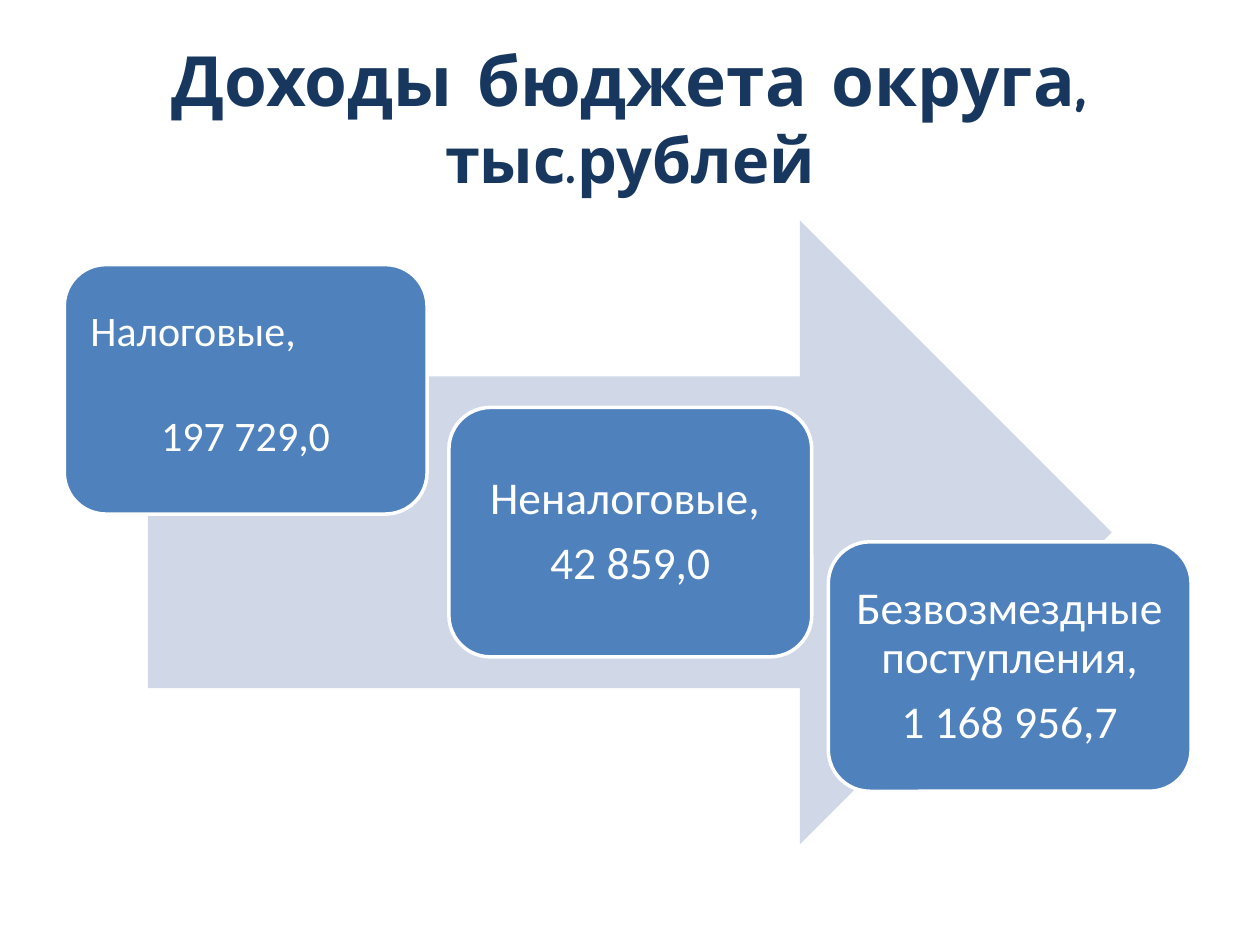
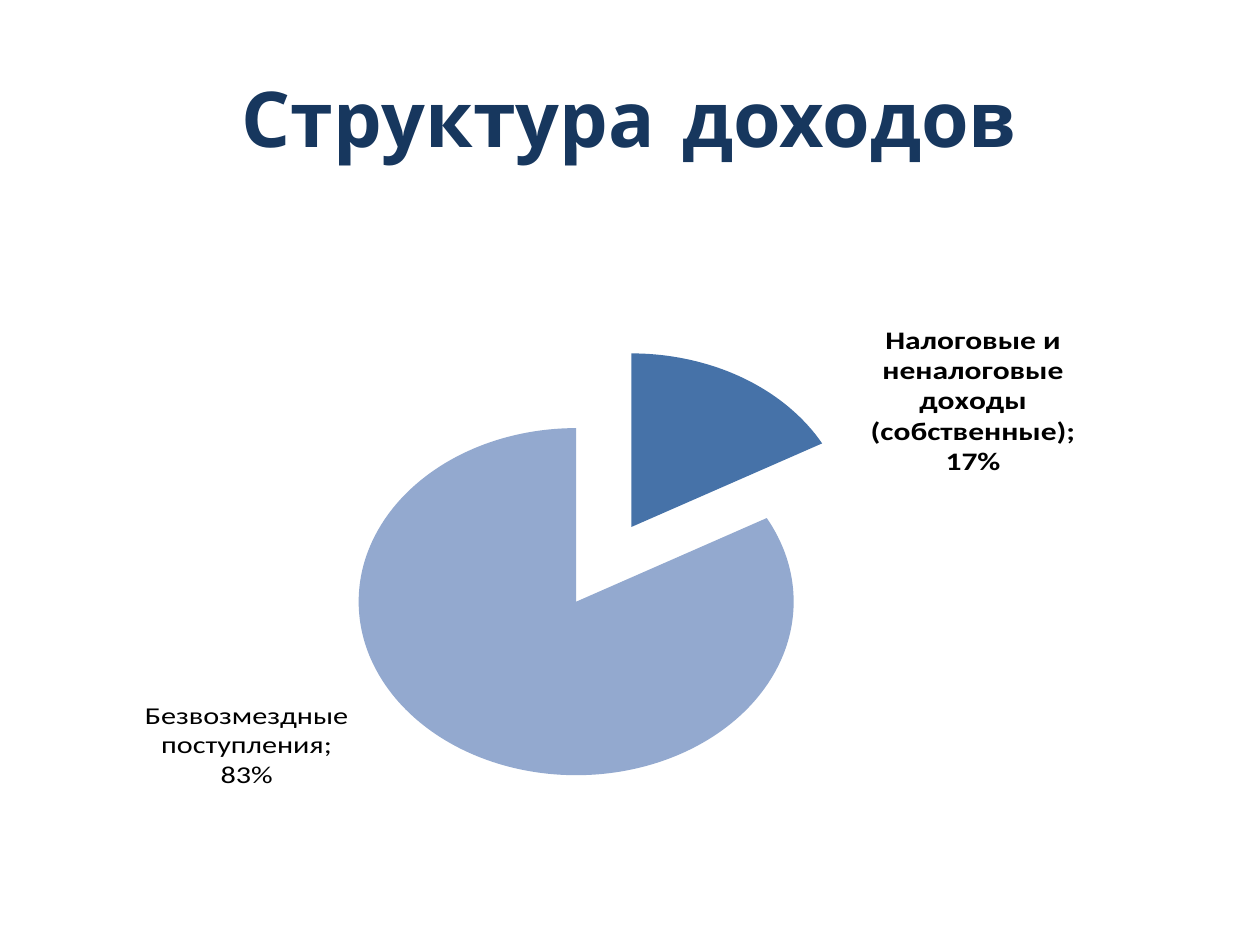
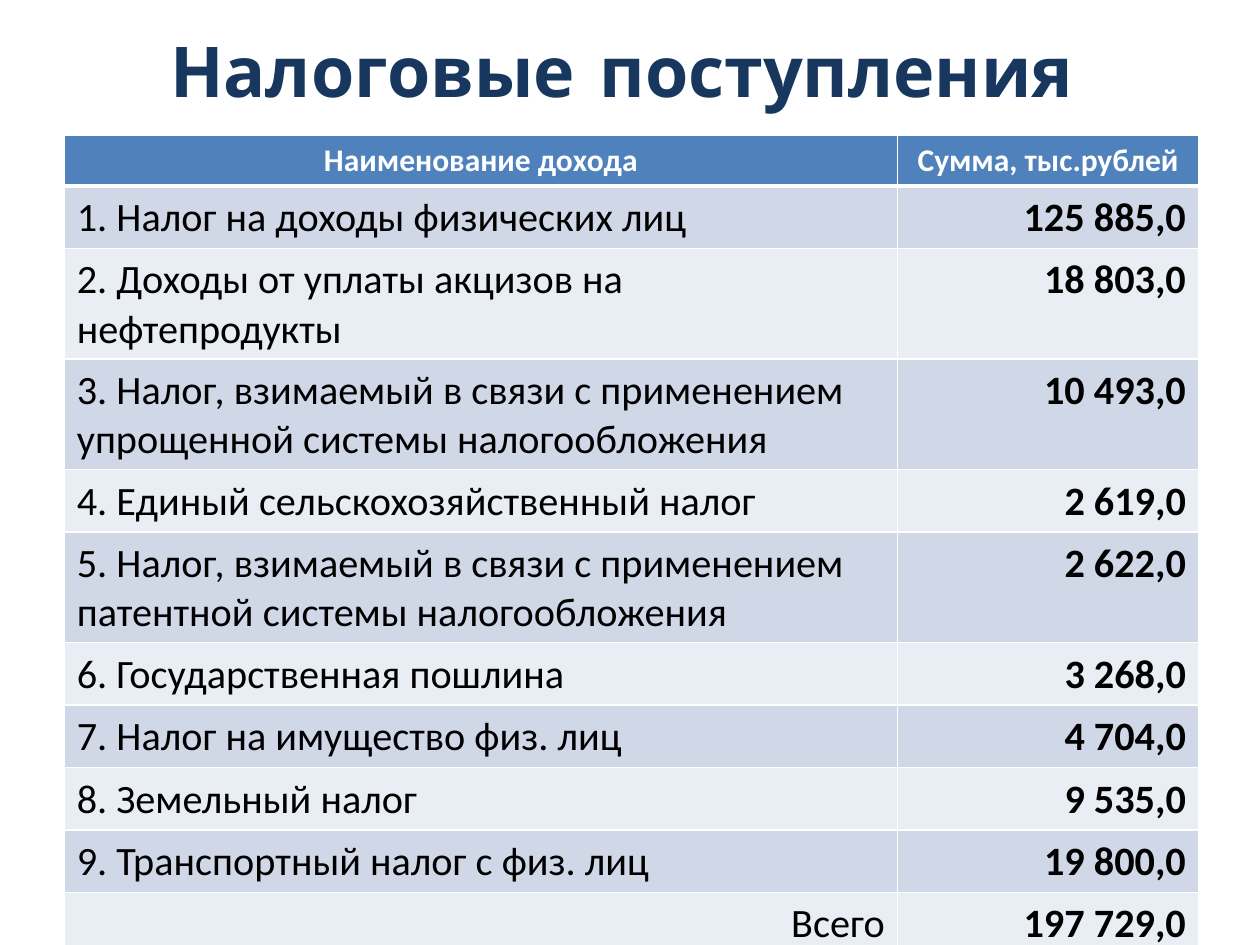
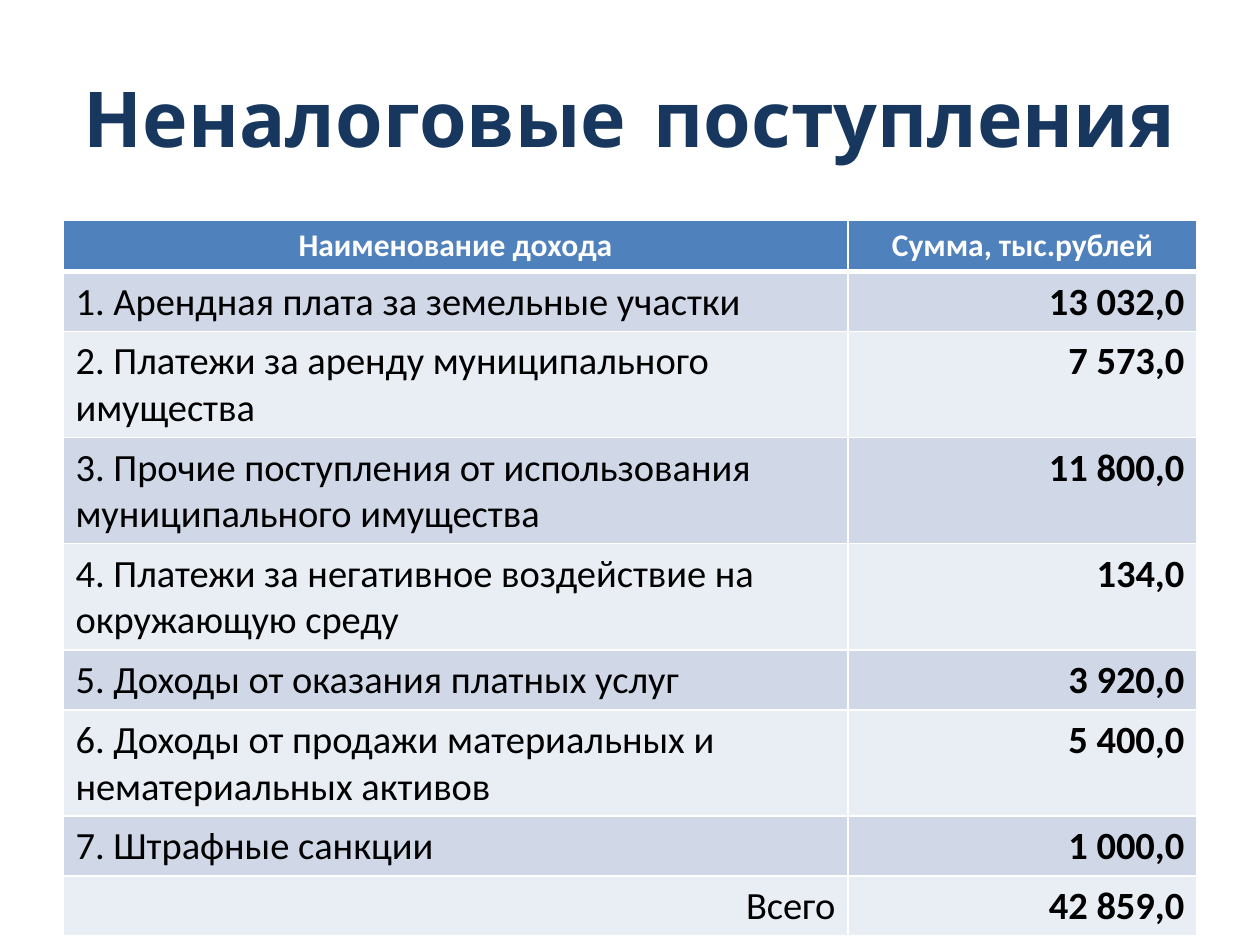
import pptx
import pptx.chart.data
import pptx.dml.color
import pptx.enum.chart
import pptx.enum.shapes
import pptx.enum.text
import pptx.oxml
import pptx.oxml.ns
import pptx.util

Pt = pptx.util.Pt
RGB = pptx.dml.color.RGBColor
ALIGN = pptx.enum.text.PP_ALIGN
MIDDLE = pptx.enum.text.MSO_ANCHOR.MIDDLE
SHAPE = pptx.enum.shapes.MSO_SHAPE
qn = pptx.oxml.ns.qn

NAVY = RGB(0x17, 0x37, 0x5E)
BLUE = RGB(0x4F, 0x81, 0xBD)
BAND_DARK = RGB(0xD0, 0xD8, 0xE8)
BAND_LIGHT = RGB(0xE9, 0xED, 0xF4)
OWN_INCOME = RGB(0x46, 0x72, 0xA8)
GRANTS = RGB(0x93, 0xA9, 0xCF)
WHITE = RGB(0xFF, 0xFF, 0xFF)
BLACK = RGB(0, 0, 0)
TITLE_FONT = "Comic Neue"
BODY_FONT = "Calibri"


def write(paragraph, text, size, color=BLACK, bold=False, font=BODY_FONT, align=ALIGN.LEFT):
    """Add a formatted run to a paragraph."""
    paragraph.alignment = align
    run = paragraph.add_run()
    run.text = text
    run.font.name, run.font.size, run.font.bold = font, Pt(size), bold
    run.font.color.rgb = color


def add_titled_slide(parts, left=36, top=21.6, height=90):
    """Add a slide whose title is made of (text, size) parts."""
    slide = deck.slides.add_slide(deck.slide_layouts[6])
    frame = slide.shapes.add_textbox(Pt(left), Pt(top), Pt(648), Pt(height)).text_frame
    frame.word_wrap = True
    frame.vertical_anchor = MIDDLE
    for text, size in parts:
        write(frame.paragraphs[0], text, size, NAVY, True, TITLE_FONT, ALIGN.CENTER)
    return slide


deck = pptx.Presentation()
deck.slide_width, deck.slide_height = Pt(720), Pt(540)

# Slide 1: income cards stepping down along an arrow
slide = add_titled_slide([("Доходы бюджета округа, ", 39.6), ("тыс.рублей", 36)])
arrow = slide.shapes.add_shape(SHAPE.RIGHT_ARROW, Pt(84.5), Pt(126), Pt(550.8), Pt(356.4))
arrow.shadow.inherit = False
arrow.fill.solid()
arrow.fill.fore_color.rgb = BAND_DARK
arrow.line.fill.background()

# left, top, label, amount, text size, bottom inset, gap, label alignment
INSET = 8
cards = [
    (36.72, 151.2, "Налоговые,", "197 729,0", 24, 12.6, 34, ALIGN.LEFT),
    (256.5, 232.8, "Неналоговые, ", "42 859,0", 26, INSET, 9, ALIGN.CENTER),
    (473.3, 309.6, "Безвозмездные поступления,", "1 168 956,7", 26, INSET, 9, ALIGN.CENTER),
]
for left, top, label, amount, size, bottom_inset, gap, label_align in cards:
    card = slide.shapes.add_shape(SHAPE.ROUNDED_RECTANGLE, Pt(left), Pt(top), Pt(207.36), Pt(142.56))
    card.shadow.inherit = False
    card.fill.solid()
    card.fill.fore_color.rgb = BLUE
    card.line.color.rgb = WHITE
    card.line.width = Pt(2)
    frame = card.text_frame
    frame.word_wrap = True
    frame.vertical_anchor = MIDDLE
    frame.margin_left = frame.margin_right = frame.margin_top = Pt(INSET)
    frame.margin_bottom = Pt(bottom_inset)
    write(frame.paragraphs[0], label, size, WHITE, align=label_align)
    amount_line = frame.add_paragraph()
    amount_line.space_before = Pt(gap)
    write(amount_line, amount, size, WHITE, align=ALIGN.CENTER)
    for paragraph in frame.paragraphs:
        paragraph.line_spacing = 0.9

# Slide 2: pie of the income structure
slide = add_titled_slide([("Структура доходов", 44)])
shares = pptx.chart.data.CategoryChartData(number_format="0%")
shares.categories = ["Налоговые и неналоговые доходы (собственные)", "Безвозмездные поступления"]
shares.add_series("Series 1", (0.17, 0.83))
pie = slide.shapes.add_chart(
    pptx.enum.chart.XL_CHART_TYPE.PIE, Pt(36), Pt(126), Pt(648), Pt(356.4), shares
).chart
pie.has_legend = False
pie.has_title = False
pie.font.name, pie.font.size = BODY_FONT, Pt(18)
pie.font.color.rgb = BLACK
pie.plots[0].vary_by_categories = True

LAYOUT = (
    '<c:layout xmlns:c="http://schemas.openxmlformats.org/drawingml/2006/chart">'
    "<c:manualLayout>%s</c:manualLayout></c:layout>"
)
plot_area = pie.plots[0]._element.getparent()
for old_layout in plot_area.findall(qn("c:layout")):
    plot_area.remove(old_layout)
plot_area.insert(0, pptx.oxml.parse_xml(LAYOUT % (
    '<c:layoutTarget val="inner"/><c:xMode val="edge"/><c:yMode val="edge"/>'
    '<c:x val="0.237"/><c:y val="0.071"/><c:w val="0.48"/><c:h val="0.872"/>')))

# Slice colours and labels, each label shifted by a share of the chart size
series = pie.plots[0].series[0]
slices = [(OWN_INCOME, True, 18, 0.11, 0.21), (GRANTS, False, 17.25, -0.1, -0.11)]
for index, (color, bold, size, shift_x, shift_y) in enumerate(slices):
    point = series.points[index]
    point.format.fill.solid()
    point.format.fill.fore_color.rgb = color
    label = point.data_label
    label.font.name, label.font.size, label.font.bold = BODY_FONT, Pt(size), bold
    label.font.color.rgb = BLACK
    label.position = pptx.enum.chart.XL_LABEL_POSITION.OUTSIDE_END
    label_xml = series._element.findall(".//" + qn("c:dLbl"))[index]
    label_xml.find(qn("c:showVal")).set("val", "1")
    label_xml.find(qn("c:showCatName")).set("val", "1")
    label_xml.find(qn("c:showPercent")).set("val", "0")
    label_xml.insert(1, pptx.oxml.parse_xml(
        LAYOUT % f'<c:x val="{shift_x}"/><c:y val="{shift_y}"/>'))
    separator = label_xml.makeelement(qn("c:separator"), {})
    separator.text = "; "
    label_xml.append(separator)
for leader_switch in series._element.iter(qn("c:showLeaderLines")):
    leader_switch.set("val", "0")
explosion = series._element.makeelement(qn("c:explosion"), {"val": "25"})
series._element.find(qn("c:dPt")).addprevious(explosion)

# Slides 3 and 4: income tables
tax_rows = [
    ("1. Налог на доходы физических лиц", "125 885,0"),
    ("2. Доходы от уплаты акцизов на нефтепродукты", "18 803,0"),
    ("3. Налог, взимаемый в связи с применением упрощенной системы налогообложения", "10 493,0"),
    ("4. Единый сельскохозяйственный налог", "2 619,0"),
    ("5. Налог, взимаемый в связи с применением патентной системы налогообложения", "2 622,0"),
    ("6. Государственная пошлина", "3 268,0"),
    ("7. Налог на имущество физ. лиц", "4 704,0"),
    ("8. Земельный налог", "9 535,0"),
    ("9. Транспортный налог с физ. лиц", "19 800,0"),
    ("Всего", "197 729,0"),
]
non_tax_rows = [
    ("1. Арендная плата за земельные участки", "13 032,0"),
    ("2. Платежи за аренду муниципального имущества", "7 573,0"),
    ("3. Прочие поступления от использования муниципального имущества", "11 800,0"),
    ("4. Платежи за негативное воздействие на окружающую среду", "134,0"),
    ("5. Доходы от оказания платных услуг", "3 920,0"),
    ("6. Доходы от продажи материальных и нематериальных активов", "5 400,0"),
    ("7. Штрафные санкции", "1 000,0"),
    ("Всего", "42 859,0"),
]
tax_slide = add_titled_slide([("Налоговые поступления", 40)], left=31.2, top=3.6, height=72.7)
non_tax_slide = add_titled_slide([("Неналоговые поступления", 44)])
ROW_HEIGHT = 29.2
BORDER = (
    '<a:%s xmlns:a="http://schemas.openxmlformats.org/drawingml/2006/main" w="%d">'
    '<a:solidFill><a:srgbClr val="FFFFFF"/></a:solidFill></a:%s>'
)

# slide, rows, left, top, column widths, text size, space above and below the text
tables = [
    (tax_slide, tax_rows, 36.72, 77.04, (476.2, 172.1), 23, 4.05),
    (non_tax_slide, non_tax_rows, 36, 126, (448.56, 199.44), 22, 3.93),
]
for slide, incomes, left, top, widths, size, padding in tables:
    rows = [("Наименование дохода", "Сумма, тыс.рублей")] + incomes
    table = slide.shapes.add_table(
        len(rows), 2, Pt(left), Pt(top), Pt(sum(widths)), Pt(ROW_HEIGHT * len(rows))
    ).table
    table.horz_banding = False
    for column, width in zip(table.columns, widths):
        column.width = Pt(width)
    for row_index, row in enumerate(rows):
        table.rows[row_index].height = Pt(ROW_HEIGHT)
        for column_index, text in enumerate(row):
            cell = table.cell(row_index, column_index)
            header = row_index == 0
            edges = {
                "lnL": 1,
                "lnR": 1,
                "lnT": 3 if row_index == 1 else 1,
                "lnB": 3 if header else 1,
            }
            for edge, weight in edges.items():
                cell._tc.get_or_add_tcPr().append(
                    pptx.oxml.parse_xml(BORDER % (edge, Pt(weight), edge)))
            cell.fill.solid()
            paragraph = cell.text_frame.paragraphs[0]
            if header:
                cell.fill.fore_color.rgb = BLUE
                write(paragraph, text, 18, WHITE, True, align=ALIGN.CENTER)
            else:
                cell.fill.fore_color.rgb = BAND_DARK if row_index % 2 else BAND_LIGHT
                cell.margin_top = cell.margin_bottom = Pt(padding)
                is_amount = column_index == 1
                to_right = is_amount or text == "Всего"
                write(paragraph, text, size, bold=is_amount,
                      align=ALIGN.RIGHT if to_right else ALIGN.LEFT)

deck.save("out.pptx")
